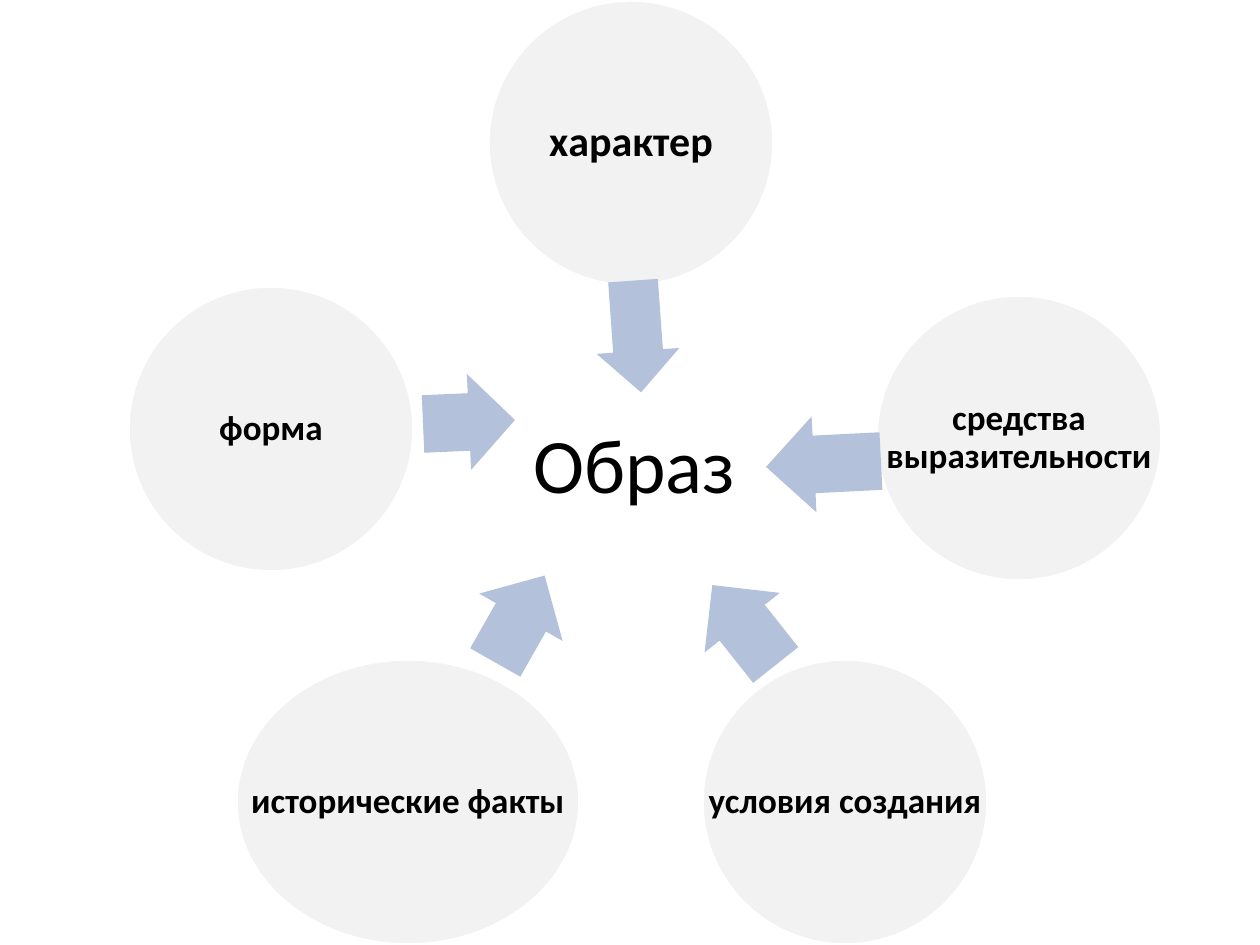
from dataclasses import dataclass

from pptx import Presentation
from pptx.dml.color import RGBColor
from pptx.enum.shapes import MSO_SHAPE
from pptx.enum.text import MSO_ANCHOR, PP_ALIGN
from pptx.util import Pt

EMU_PER_PX = 914400 / 126


def px(length):
    return round(length * EMU_PER_PX)


@dataclass(frozen=True)
class Theme:
    font: str = "Calibri"
    text: RGBColor = RGBColor(0x00, 0x00, 0x00)
    circle: RGBColor = RGBColor(0xF2, 0xF2, 0xF2)
    outline: RGBColor = RGBColor(0xFF, 0xFF, 0xFF)
    arrow: RGBColor = RGBColor(0xB3, 0xC1, 0xDB)
    title_size: int = 44
    lead_size: int = 24
    label_size: int = 20


class Diagram:
    """Holds the theme and the page on which elements are drawn."""

    def __init__(self, page, theme):
        self.page = page
        self.theme = theme

    def shape(self, kind, bounds, fill):
        shape = self.page.shapes.add_shape(kind, *map(px, bounds))
        shape.shadow.inherit = False
        shape.fill.solid()
        shape.fill.fore_color.rgb = fill
        return shape

    def text(self, bounds, words, size, bold=False, inset=4, line_spacing=1.0):
        box = self.page.shapes.add_textbox(*map(px, bounds))
        frame = box.text_frame
        frame.word_wrap = True
        frame.vertical_anchor = MSO_ANCHOR.MIDDLE
        frame.margin_left = frame.margin_right = px(inset)
        frame.margin_top = frame.margin_bottom = px(inset)
        para = frame.paragraphs[0]
        para.alignment = PP_ALIGN.CENTER
        para.line_spacing = line_spacing
        span = para.add_run()
        span.text = words
        span.font.name = self.theme.font
        span.font.size = Pt(size)
        span.font.bold = bold
        span.font.color.rgb = self.theme.text

    def circle(self, bounds, words, size):
        circle = self.shape(MSO_SHAPE.OVAL, bounds, self.theme.circle)
        circle.line.color.rgb = self.theme.outline
        circle.line.width = Pt(2)
        self.text(bounds, words, size, bold=True, line_spacing=0.9)

    def arrow(self, bounds, rotation):
        arrow = self.shape(MSO_SHAPE.RIGHT_ARROW, bounds, self.theme.arrow)
        arrow.line.fill.background()
        arrow.adjustments[0] = 0.6
        arrow.adjustments[1] = 0.5
        arrow.rotation = rotation


def main():
    deck = Presentation()
    deck.slide_width, deck.slide_height = px(1260), px(945)
    theme = Theme()
    diagram = Diagram(deck.slides.add_slide(deck.slide_layouts[6]), theme)

    diagram.text((384, 384, 501, 158), "Образ", theme.title_size, inset=6)

    diameter = 286
    # label, size, circle left, top and width, arrow bounds, arrow rotation
    aspects = [
        ("характер", theme.lead_size, 488, 0, diameter,
         (581, 295, 112, 83), 85.9),
        ("средства выразительности", theme.label_size, 876, 295, diameter,
         (766, 416, 115, 96), 177.1),
        ("условия создания", theme.label_size, 702, 659, diameter,
         (693, 577, 102, 96), 231.6),
        ("исторические факты", theme.label_size, 236, 659, 344,
         (470, 571, 100, 96), 299.6),
        ("форма", theme.label_size, 128, 286, diameter,
         (423, 374, 92, 96), 357.5),
    ]
    for words, size, left, top, width, arrow_bounds, rotation in aspects:
        diagram.circle((left, top, width, diameter), words, size)
        diagram.arrow(arrow_bounds, rotation)

    deck.save("out.pptx")


if __name__ == "__main__":
    main()
